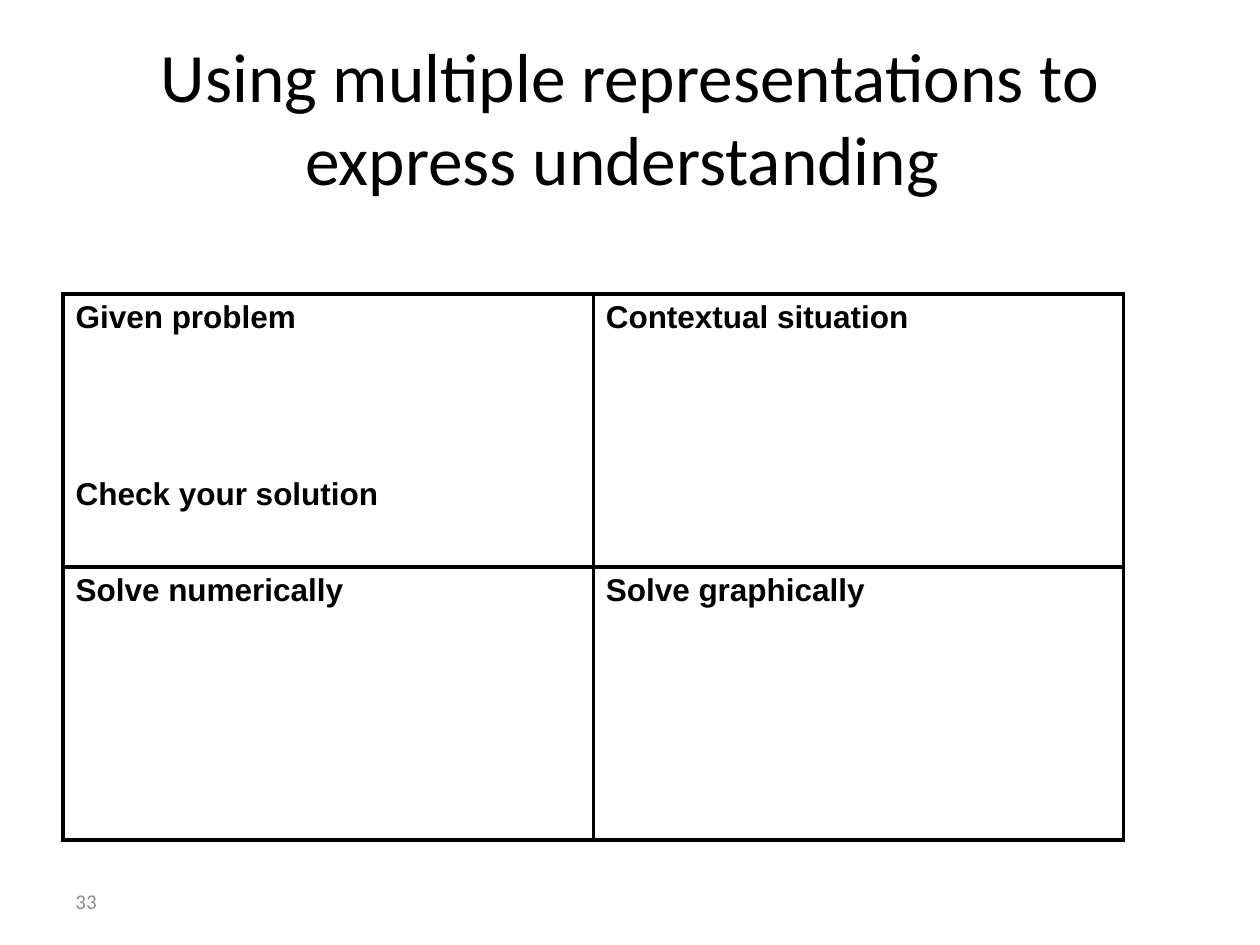
from dataclasses import dataclass

from lxml import etree
from pptx import Presentation
from pptx.dml.color import RGBColor
from pptx.enum.text import MSO_ANCHOR, MSO_AUTO_SIZE, PP_ALIGN
from pptx.oxml.ns import qn
from pptx.util import Pt

BLACK = RGBColor(0x00, 0x00, 0x00)
GRAY = RGBColor(0x8C, 0x8C, 0x8C)
MIDDLE = MSO_ANCHOR.MIDDLE
TOP = MSO_ANCHOR.TOP
FIXED = MSO_AUTO_SIZE.NONE
LEFT = PP_ALIGN.LEFT
CENTER = PP_ALIGN.CENTER


@dataclass
class Panel:
    row: int
    col: int
    lines: tuple[str, ...]


PANELS = (
    Panel(0, 0, ("Given problem", "Check your solution")),
    Panel(0, 1, ("Contextual situation",)),
    Panel(1, 0, ("Solve numerically",)),
    Panel(1, 1, ("Solve graphically",)),
)


def write(frame, *lines: str, font: str = "Arial", size: float = 18,
          color: RGBColor = BLACK, bold: bool = False, align=LEFT,
          anchor=TOP, gap: float = 0) -> None:
    frame.word_wrap = True
    frame.vertical_anchor = anchor
    for index, line in enumerate(lines):
        para = frame.add_paragraph() if index else frame.paragraphs[0]
        para.alignment = align
        para.space_before = Pt(gap if index else 0)
        run = para.add_run()
        run.text = line
        run.font.name = font
        run.font.size = Pt(size)
        run.font.bold = bold
        run.font.color.rgb = color


def border(cell, width: float, color: RGBColor) -> None:
    props = cell._tc.get_or_add_tcPr()
    for side in ("lnL", "lnR", "lnT", "lnB"):
        line = etree.SubElement(props, qn(f"a:{side}"), w=str(Pt(width)))
        fill = etree.SubElement(line, qn("a:solidFill"))
        etree.SubElement(fill, qn("a:srgbClr"), val=str(color))


def draw_panel(table, panel: Panel) -> None:
    cell = table.cell(panel.row, panel.col)
    write(cell.text_frame, *panel.lines, bold=True, gap=80.5)
    border(cell, 2.25, BLACK)
    cell.fill.background()


def main() -> None:
    deck = Presentation()
    deck.slide_width, deck.slide_height = Pt(720), Pt(540)
    slide = deck.slides.add_slide(deck.slide_layouts[5])

    title = slide.shapes.title
    title.left, title.top = Pt(36), Pt(21.6)
    title.width, title.height = Pt(648), Pt(90)
    title.text_frame.auto_size = FIXED
    write(title.text_frame,
          "Using multiple representations to express understanding ",
          font="Calibri", size=39.6, align=CENTER, anchor=MIDDLE)

    table = slide.shapes.add_table(
        2, 2, Pt(36), Pt(168), Pt(606), Pt(312)).table
    table.first_row = False
    table.horz_banding = False
    for panel in PANELS:
        draw_panel(table, panel)

    number = slide.shapes.add_textbox(Pt(36), Pt(500.5), Pt(168), Pt(28.75))
    write(number.text_frame, "33", font="Calibri", size=12, color=GRAY,
          anchor=MIDDLE)

    deck.save("out.pptx")


if __name__ == "__main__":
    main()
